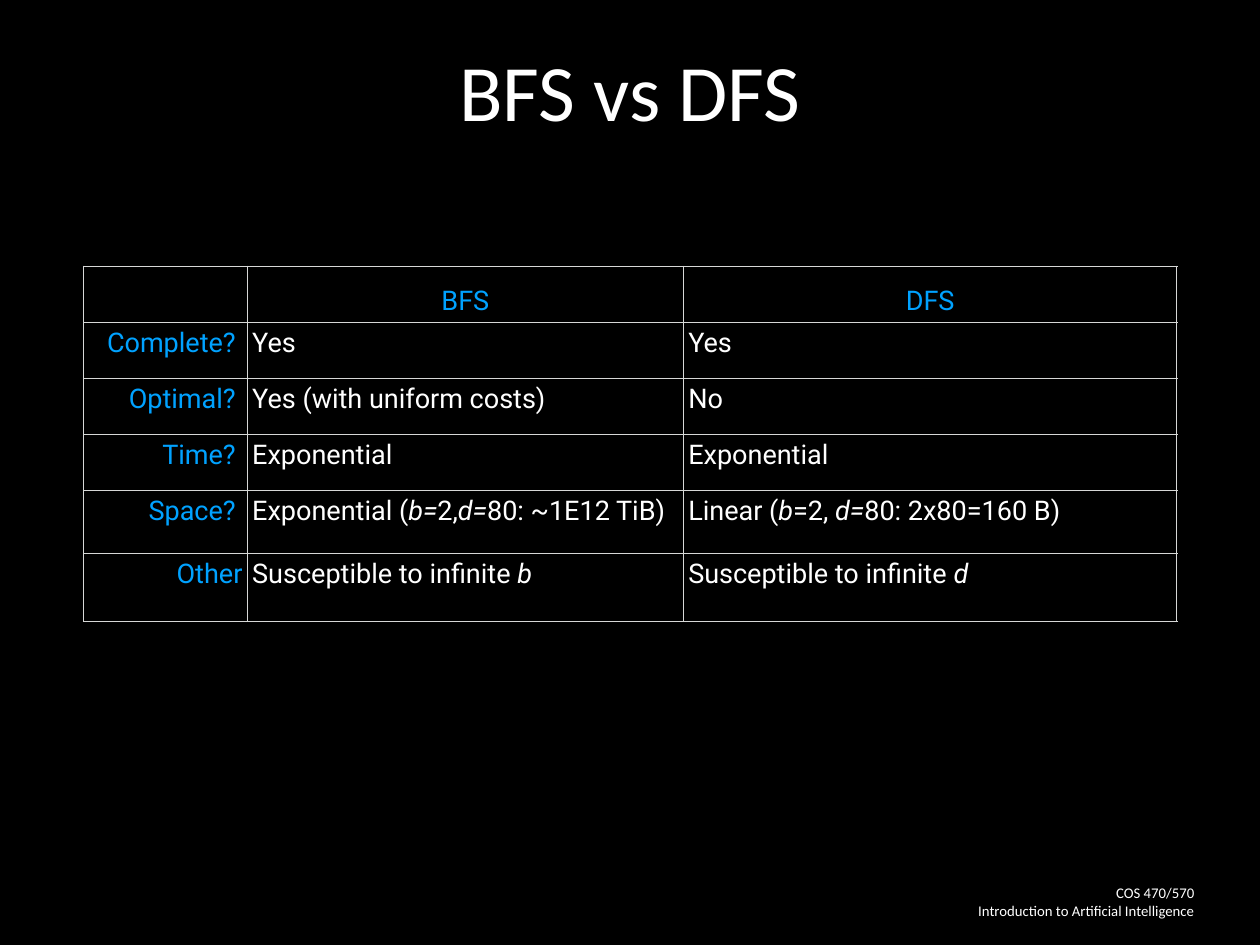
"""Build the slide that compares breadth-first and depth-first search."""
from dataclasses import dataclass

from lxml.etree import SubElement
from pptx import Presentation
from pptx.dml.color import RGBColor as Rgb
from pptx.enum.text import MSO_ANCHOR as Anchor, MSO_AUTO_SIZE as AutoSize, PP_ALIGN as Align
from pptx.oxml.ns import qn
from pptx.util import Cm, Pt


@dataclass(frozen=True)
class Theme:
    """Colours, fonts and sizes of the deck."""
    background: str = "000000"
    text: str = "FFFFFF"
    accent: str = "00A2FF"
    rule: str = "D6D7D6"
    heading_font: str = "Calibri"
    table_font: str = "Roboto"
    title_size: int = 65
    table_size: int = 22
    footer_size: int = 12
    rule_width: int = 1
    inset: float = 0.14


COLUMN_WIDTHS = (4.7, 12.5, 14.15)
ROW_HEIGHTS = (1.61, 1.61, 1.61, 1.61, 1.81, 1.95)
COMPARISON = (
    ("", "BFS", "DFS"),
    ("Complete? ", "Yes", "Yes"),
    ("Optimal? ", "Yes (with uniform costs)", "No"),
    ("Time? ", "Exponential", "Exponential"),
    ("Space? ", "Exponential (*b=*2,*d=*80: ~1E12 TiB)", "Linear (*b*=2, *d=*80: 2x80=160 B)"),
    ("Other", "Susceptible to infinite *b*", "Susceptible to infinite *d*"),
)


def write(frame, text, *, font, size, color, align=Align.LEFT):
    """Fill a text frame line by line, setting parts between asterisks in italics."""
    for number, line in enumerate(text.split("\n")):
        paragraph = frame.add_paragraph() if number else frame.paragraphs[0]
        paragraph.alignment = align
        for index, part in enumerate(line.split("*")):
            if part:
                run = paragraph.add_run()
                run.text = part
                run.font.name = font
                run.font.size = Pt(size)
                run.font.italic = index % 2 == 1
                run.font.color.rgb = Rgb.from_string(color)


class SlideBuilder:
    """Draws styled elements on one slide."""

    def __init__(self, slide, theme):
        """Keep the slide and theme, and paint the background."""
        self.slide = slide
        self.theme = theme
        slide.background.fill.solid()
        slide.background.fill.fore_color.rgb = Rgb.from_string(theme.background)

    def set_insets(self, target):
        """Give a cell or text frame equal margins."""
        for side in ("left", "top", "right", "bottom"):
            setattr(target, f"margin_{side}", Cm(self.theme.inset))

    def prepare(self, frame):
        """Set the wrapping and anchoring of a text frame."""
        frame.word_wrap = True
        frame.auto_size = AutoSize.NONE
        frame.vertical_anchor = Anchor.MIDDLE
        self.set_insets(frame)

    def title(self, text, left, top, width, height):
        """Place and format the title placeholder."""
        heading = self.slide.shapes.title
        heading.left, heading.top = Cm(left), Cm(top)
        heading.width, heading.height = Cm(width), Cm(height)
        self.prepare(heading.text_frame)
        write(heading.text_frame, text, font=self.theme.heading_font,
              size=self.theme.title_size, color=self.theme.text, align=Align.CENTER)

    def footer(self, text, left, top, width, height):
        """Add the right-aligned course label."""
        label = self.slide.shapes.add_textbox(Cm(left), Cm(top), Cm(width), Cm(height))
        self.prepare(label.text_frame)
        write(label.text_frame, text, font=self.theme.heading_font,
              size=self.theme.footer_size, color=self.theme.text, align=Align.RIGHT)

    def rule_cell(self, cell):
        """Draw the four borders of a cell."""
        properties = cell._tc.get_or_add_tcPr()
        for side in ("lnL", "lnR", "lnT", "lnB"):
            border = SubElement(properties, qn(f"a:{side}"), w=str(Pt(self.theme.rule_width)))
            fill = SubElement(border, qn("a:solidFill"))
            SubElement(fill, qn("a:srgbClr"), val=self.theme.rule)

    def table(self, rows, left, top, widths, heights):
        """Add a ruled table with a heading row and a heading column."""
        grid = self.slide.shapes.add_table(
            len(rows), len(widths), Cm(left), Cm(top), Cm(sum(widths)), Cm(sum(heights))).table
        grid.first_row = grid.horz_banding = False
        for column, width in zip(grid.columns, widths):
            column.width = Cm(width)
        for row_index, (texts, height) in enumerate(zip(rows, heights)):
            grid.rows[row_index].height = Cm(height)
            for column_index, text in enumerate(texts):
                cell = grid.cell(row_index, column_index)
                self.rule_cell(cell)
                cell.fill.background()
                self.set_insets(cell)
                cell.vertical_anchor = Anchor.TOP if row_index else Anchor.BOTTOM
                is_heading = row_index == 0 or column_index == 0
                align = (Align.CENTER if row_index == 0
                         else Align.RIGHT if column_index == 0 else Align.LEFT)
                write(cell.text_frame, text, font=self.theme.table_font,
                      size=self.theme.table_size, align=align,
                      color=self.theme.accent if is_heading else self.theme.text)


def main():
    """Build and save the presentation."""
    deck = Presentation()
    deck.slide_width, deck.slide_height = Cm(36.12), Cm(27.1)
    builder = SlideBuilder(deck.slides.add_slide(deck.slide_layouts[5]), Theme())
    builder.footer("COS 470/570\nIntroduction to Artificial Intelligence", 27.18, 25.15, 7.2, 1.42)
    builder.title("BFS vs DFS", 2.64, 0.61, 30.84, 3.89)
    builder.table(COMPARISON, 2.39, 7.63, COLUMN_WIDTHS, ROW_HEIGHTS)
    deck.save("out.pptx")


if __name__ == "__main__":
    main()
